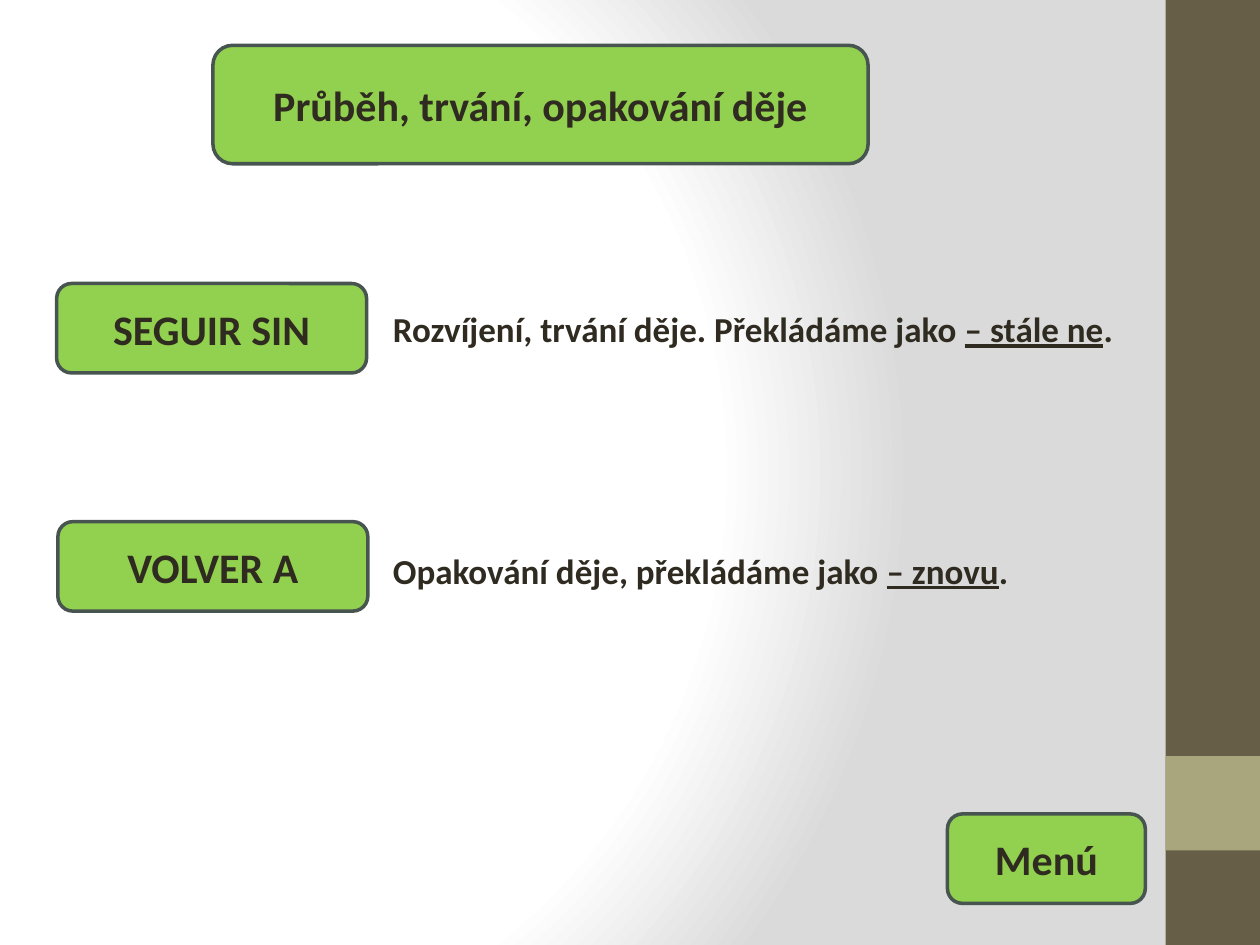
from pptx import Presentation
from pptx.dml.color import RGBColor
from pptx.enum.shapes import MSO_SHAPE
from pptx.enum.text import MSO_ANCHOR, MSO_AUTO_SIZE, PP_ALIGN
from pptx.oxml import parse_xml
from pptx.oxml.ns import nsdecls
from pptx.util import Inches, Pt

RECT, ROUNDED = MSO_SHAPE.RECTANGLE, MSO_SHAPE.ROUNDED_RECTANGLE
MIDDLE = MSO_ANCHOR.MIDDLE
LEFT, CENTER = PP_ALIGN.LEFT, PP_ALIGN.CENTER
FIT_SHAPE = MSO_AUTO_SIZE.SHAPE_TO_FIT_TEXT

WHITE = RGBColor(0xFF, 0xFF, 0xFF)
GREY = RGBColor(0xDA, 0xDA, 0xDA)
BROWN = RGBColor(0x67, 0x5E, 0x47)
KHAKI = RGBColor(0xA9, 0xA5, 0x7C)
GREEN = RGBColor(0x92, 0xD0, 0x50)
OUTLINE = RGBColor(0x48, 0x54, 0x4F)
INK = RGBColor(0x2F, 0x2B, 0x20)
FONT = "Calibri"

# The slide is a grid of 100 columns by 75 rows
COLS, ROWS = 100, 75
CELL = Inches(0.1)
SIDEBAR_COL, SIDEBAR_COLS = 92.5, 7.5
BUTTON_ROWS = 7.1
VERB_COLS = 24.6
MEANING_COL, MEANING_ROWS = 30.2, 4.4

# Verb, its column and row, then the meaning's row, width and runs
VERBS = [
    ("SEGUIR SIN", 4.5, 22.5, 23.9, 59.7,
     ["Rozvíjení, trvání děje. Překládáme jako ", "– stále ne", "."]),
    ("VOLVER A", 4.6, 41.4, 43.1, 51.3,
     ["Opakování děje, překládáme jako ", "– znovu", "."]),
]


def grid(*cells):
    return [round(cell * CELL) for cell in cells]


def paint_background(slide):
    stops = "".join(
        f'<a:gs pos="{share * 1000}"><a:srgbClr val="{color}"/></a:gs>'
        for share, color in ((0, WHITE), (75, WHITE), (100, GREY)))
    slide.element.cSld.insert(0, parse_xml(
        f'<p:bg {nsdecls("p", "a")}><p:bgPr><a:gradFill rotWithShape="1">'
        f'<a:gsLst>{stops}</a:gsLst><a:path path="circle">'
        '<a:fillToRect l="20000" t="50000" r="100000" b="50000"/></a:path>'
        '</a:gradFill><a:effectLst/></p:bgPr></p:bg>'))


def write(frame, runs, size=24, align=CENTER, underlined=None):
    paragraph = frame.paragraphs[0]
    paragraph.alignment = align
    for index, text in enumerate(runs):
        run = paragraph.add_run()
        run.text = text
        font = run.font
        font.name, font.size, font.bold = FONT, Pt(size), True
        font.color.rgb = INK
        if index == underlined:
            font.underline = True


def add_block(slide, kind, col, row, cols, rows, color):
    block = slide.shapes.add_shape(kind, *grid(col, row, cols, rows))
    block.shadow.inherit = False
    block.fill.solid()
    block.fill.fore_color.rgb = color
    block.line.fill.background()
    return block


def add_button(slide, label, col, row, cols, rows=BUTTON_ROWS):
    button = add_block(slide, ROUNDED, col, row, cols, rows, GREEN)
    button.line.color.rgb = OUTLINE
    button.line.width = Pt(2)
    button.text_frame.vertical_anchor = MIDDLE
    write(button.text_frame, [label])


def add_meaning(slide, runs, row, cols):
    meaning = slide.shapes.add_textbox(
        *grid(MEANING_COL, row, cols, MEANING_ROWS)).text_frame
    meaning.word_wrap = False
    meaning.auto_size = FIT_SHAPE
    write(meaning, runs, size=20, align=LEFT, underlined=1)


def main():
    deck = Presentation()
    deck.slide_width, deck.slide_height = grid(COLS, ROWS)
    slide = deck.slides.add_slide(deck.slide_layouts[6])

    # Background and sidebar
    paint_background(slide)
    add_block(slide, RECT, SIDEBAR_COL, 0, SIDEBAR_COLS, ROWS, BROWN)
    add_block(slide, RECT, SIDEBAR_COL, 60, SIDEBAR_COLS, SIDEBAR_COLS, KHAKI)

    # Heading
    add_button(slide, "Průběh, trvání, opakování děje", 16.9, 3.6, 52, 9.4)

    # Verbs with their meanings
    for verb, col, row, meaning_row, meaning_cols, runs in VERBS:
        add_button(slide, verb, col, row, VERB_COLS)
        add_meaning(slide, runs, meaning_row, meaning_cols)

    # Menu button
    add_button(slide, "Menú", 75.2, 64.6, 15.7)

    deck.save("out.pptx")


if __name__ == "__main__":
    main()
